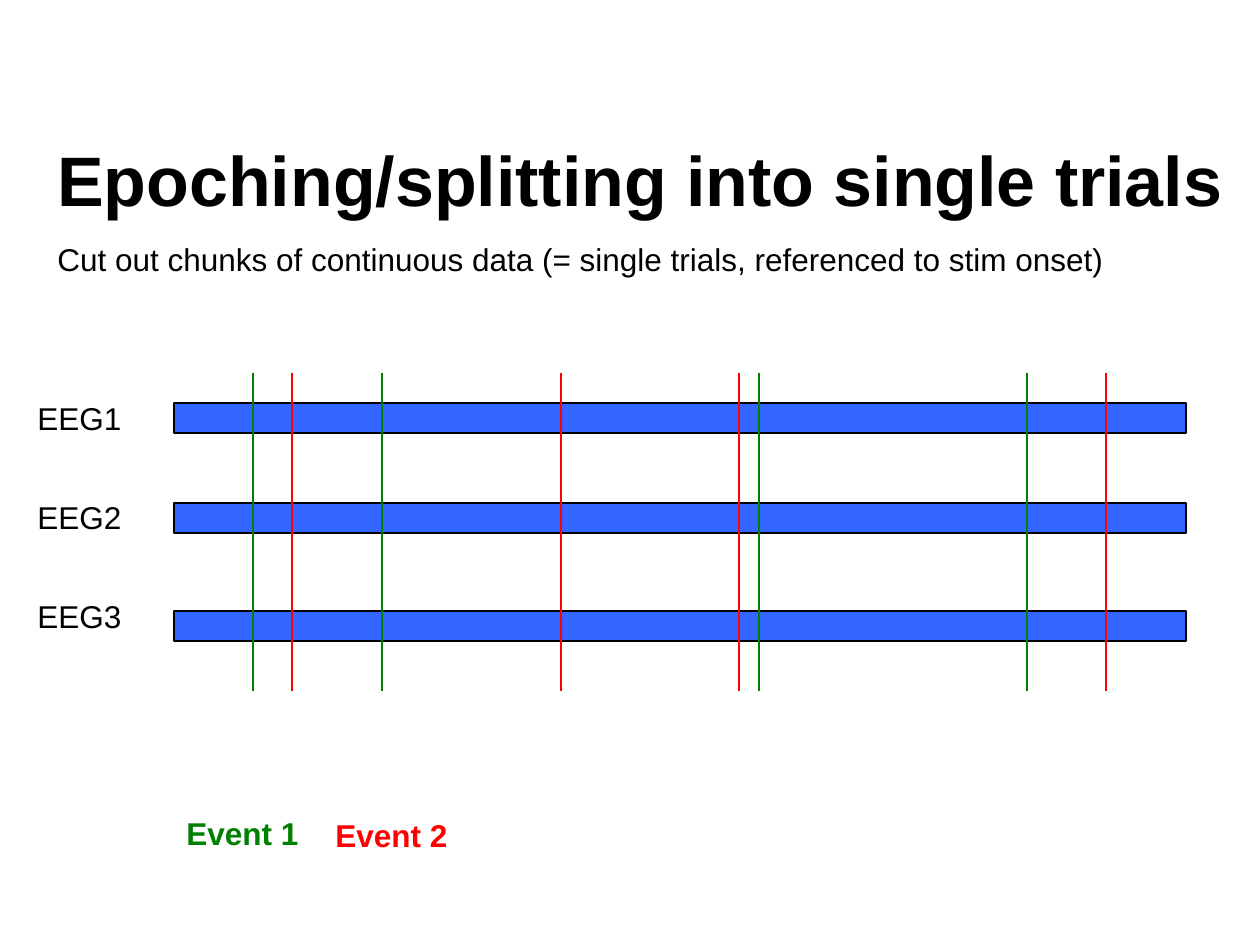
from pptx import Presentation
from pptx.dml.color import RGBColor
from pptx.enum.shapes import MSO_CONNECTOR, MSO_SHAPE
from pptx.enum.text import MSO_ANCHOR
from pptx.oxml.ns import qn
from pptx.util import Emu, Pt
from lxml import etree

RECT = MSO_SHAPE.RECTANGLE
STRAIGHT = MSO_CONNECTOR.STRAIGHT
MIDDLE = MSO_ANCHOR.MIDDLE

BLACK = RGBColor(0x00, 0x00, 0x00)
BLUE = RGBColor(0x33, 0x66, 0xFF)
GREEN = RGBColor(0x00, 0x80, 0x00)
RED = RGBColor(0xFF, 0x00, 0x00)

TITLE = "Epoching/splitting into single trials"
SUBTITLE = "Cut out chunks of continuous data (= single trials, referenced to stim onset)"
CHANNELS = [("EEG1", 393, 403), ("EEG2", 492, 503), ("EEG3", 591, 611)]
EVENTS = [
    ("Event 1", GREEN, (174, 808, 248, 74), [253, 382, 759, 1027]),
    ("Event 2", RED, (323, 810, 277, 50), [292, 561, 739, 1106]),
]
BAR_LEFT, BAR_WIDTH, BAR_HEIGHT = 174, 1012, 30
MARK_TOP, MARK_BOTTOM = 373, 691
LINE_WIDTH = Pt(0.75)


def px(n):
    return Emu(n * 914400 // 126)


def add_text(text, box, size=18, color=BLACK, bold=False):
    sp = slide.shapes.add_textbox(*map(px, box))
    tf = sp.text_frame
    tf.word_wrap = True
    p = tf.paragraphs[0]
    p.text = text
    p.font.name = "Arial"
    p.font.size = Pt(size)
    p.font.bold = bold
    p.font.color.rgb = color
    return tf


def add_bar(top):
    sp = slide.shapes.add_shape(RECT, *map(px, (BAR_LEFT, top, BAR_WIDTH, BAR_HEIGHT)))
    sp.shadow.inherit = False
    sp.fill.solid()
    sp.fill.fore_color.rgb = BLUE
    sp.line.color.rgb = BLACK
    sp.line.width = LINE_WIDTH


def add_marker(x, color):
    line = slide.shapes.add_connector(STRAIGHT, *map(px, (x, MARK_TOP, x, MARK_BOTTOM)))
    line.line.color.rgb = color
    line.line.width = LINE_WIDTH
    etree.SubElement(line._element.spPr, qn("a:effectLst"))


prs = Presentation()
prs.slide_width, prs.slide_height = px(1260), px(945)
slide = prs.slides.add_slide(prs.slide_layouts[6])

add_text(SUBTITLE, (45, 234, 1169, 79))
tf = add_text(TITLE, (45, 125, 1200, 120), size=40, bold=True)
tf.vertical_anchor = MIDDLE
tf.paragraphs[0].line_spacing = 0.85

for name, label_top, bar_top in CHANNELS:
    add_bar(bar_top)
    add_text(name, (25, label_top, 277, 50))

for name, color, box, marks in EVENTS:
    for x in marks:
        add_marker(x, color)
    add_text(name, box, color=color, bold=True)

prs.save("out.pptx")
